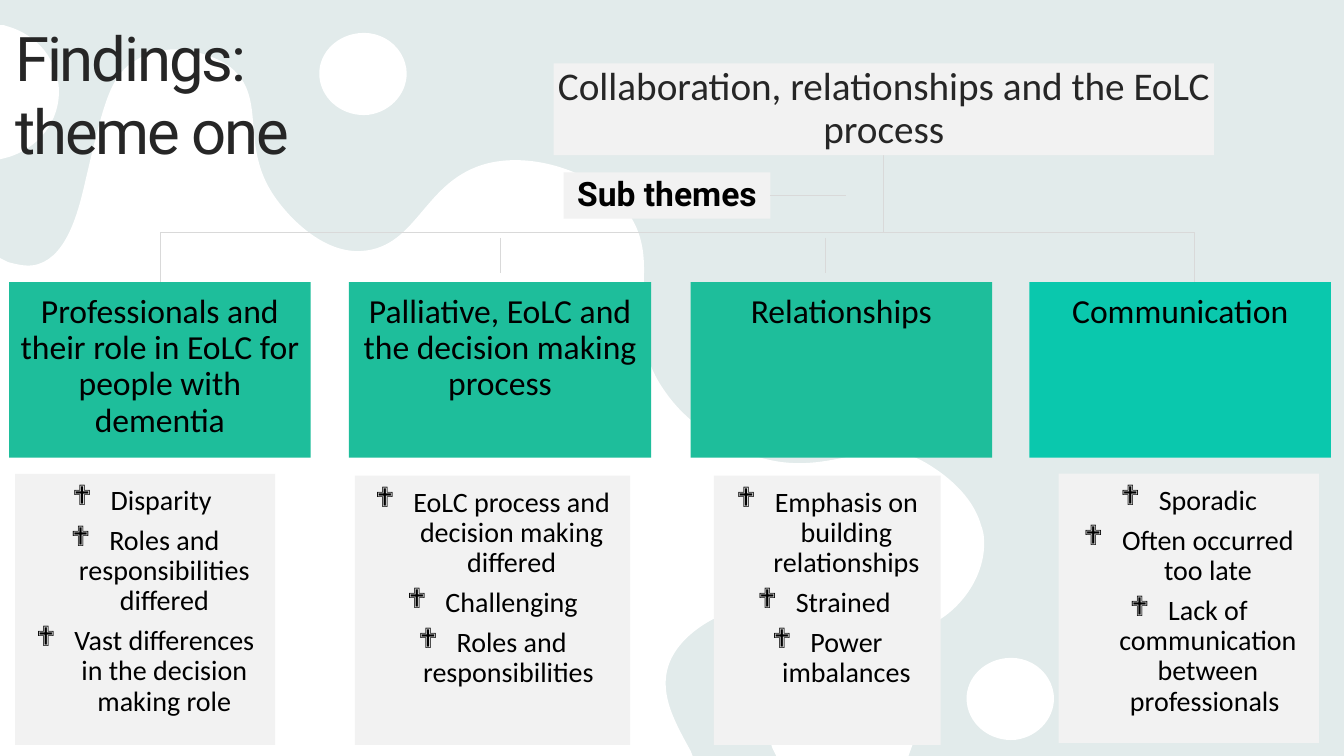
from dataclasses import dataclass

from lxml import etree
from pptx import Presentation
from pptx import util as u
from pptx.dml.color import RGBColor
from pptx.enum import shapes, text
from pptx.oxml.ns import qn

Inches = u.Inches


@dataclass(frozen=True)
class Theme:
    back: str = "E9F3F3"
    veil: str = "AEAEAE"
    white: str = "FFFFFF"
    panel: str = "F2F2F2"
    green: str = "1EBE9B"
    teal: str = "0AC8AD"
    rule: str = "D9D9D9"
    ink: str = "262626"
    black: str = "000000"
    body: str = "Calibri"
    head: str = "Roboto"
    mark: str = "Wingdings"
    title: int = 44
    theme: int = 28
    sub: int = 24
    item: int = 20


T = Theme()

# Background outlines: a start point, then straight (x, y) or curved (6 numbers) steps
WAVE = [
    (1.7, 0.49), (1.91, 0.49, 2.13, 0.55, 2.29, 0.67),
    (2.67, 0.98, 2.35, 1.47, 2.76, 2), (2.81, 2.07, 3.16, 2.52, 3.59, 2.49),
    (4.15, 2.45, 4.2, 1.78, 4.84, 1.62), (5.29, 1.51, 5.88, 1.7, 6.18, 2.05),
    (6.65, 2.6, 6.1, 3.2, 6.6, 3.89), (6.94, 4.38, 7.53, 4.54, 7.58, 4.55),
    (8.27, 4.73, 8.66, 4.29, 9.18, 4.59), (9.28, 4.65, 9.63, 4.86, 9.73, 5.21),
    (9.75, 5.26, 9.76, 5.31, 9.76, 5.36), (9.78, 5.74, 9.48, 6.13, 9.12, 6.24),
    (8.63, 6.38, 8.39, 5.91, 7.71, 5.96), (7.36, 5.98, 6.84, 6.17, 6.66, 6.53),
    (6.51, 6.84, 6.68, 7.14, 6.85, 7.45), (6.87, 7.5), (0, 7.5), (0, 2.56),
    (0.08, 2.6), (0.19, 2.63, 0.29, 2.65, 0.38, 2.62),
    (0.67, 2.53, 0.78, 2.09, 0.85, 1.78), (1.04, 0.97, 1.1, 0.74, 1.36, 0.59),
    (1.45, 0.53, 1.57, 0.5, 1.7, 0.49),
]
CORNER = [
    (0, 0.25), (0.04, 0.25), (0.07, 0.26), (0.22, 0.3, 0.35, 0.39, 0.44, 0.5),
    (0.49, 0.56, 0.52, 0.63, 0.55, 0.7), (0.67, 1.06, 0.47, 1.44, 0.08, 1.56), (0, 1.58),
]
FOOT = [
    (8.35, 6.52), (8.58, 6.52, 8.8, 6.62, 8.94, 6.8),
    (8.98, 6.86, 9.02, 6.92, 9.04, 6.99), (9.09, 7.12, 9.09, 7.26, 9.05, 7.39),
    (9.01, 7.5), (7.7, 7.5), (7.66, 7.42), (7.53, 7.06, 7.74, 6.67, 8.12, 6.56),
    (8.2, 6.53, 8.27, 6.52, 8.35, 6.52),
]
SPOT = [
    (3.55, 0.33), (3.7, 0.31, 3.85, 0.37, 3.94, 0.48),
    (3.99, 0.54, 4.02, 0.61, 4.03, 0.68), (4.06, 0.9, 3.89, 1.11, 3.65, 1.14),
    (3.41, 1.16, 3.2, 1, 3.17, 0.78), (3.14, 0.56, 3.31, 0.36, 3.55, 0.33),
]
DROP = [(x + 6.42, y + 6.2) for x, y in SPOT[:1]] + [
    tuple(n + (6.2 if i % 2 else 6.42) for i, n in enumerate(step)) for step in SPOT[1:]]

# Each sub theme: header (left, width, colour, words), panel (left, top, width, height), items
COLUMNS = [
    ((0.09, 2.99, T.green, "Professionals and their role in EoLC for people with dementia"),
     (0.15, 4.7, 2.58, 2.69),
     ["Disparity ", "Roles and responsibilities differed",
      "Vast differences in the decision making role"]),
    ((3.46, 3, T.green, "Palliative, EoLC and the decision making process"),
     (3.52, 4.72, 2.73, 2.67),
     ["EoLC process and decision making differed", "Challenging",
      "Roles and responsibilities "]),
    ((6.85, 2.99, T.green, "Relationships"),
     (7.08, 4.72, 2.25, 2.67),
     ["Emphasis on building relationships", "Strained ", "Power imbalances"]),
    ((10.21, 2.99, T.teal, "Communication"),
     (10.5, 4.7, 2.58, 2.67),
     ["Sporadic", "Often occurred too late",
      "Lack of communication between professionals "]),
]


def paint(shape, color):
    shape.shadow.inherit = False
    shape.fill.solid()
    shape.fill.fore_color.rgb = RGBColor.from_string(color)
    shape.line.fill.background()


def style(para, size, face, color, bold=False):
    para.font.size = u.Pt(size)
    para.font.name = face
    para.font.color.rgb = RGBColor.from_string(color)
    para.font.bold = bold


def inset(frame, *sides):
    (frame.margin_left, frame.margin_top,
     frame.margin_right, frame.margin_bottom) = map(Inches, sides)
    frame.word_wrap = True


def veil(slide, width, height):
    sheet = slide.shapes.add_shape(shapes.MSO_SHAPE.RECTANGLE, 0, 0, width, height)
    paint(sheet, T.veil)
    tint = sheet._element.spPr.find(qn("a:solidFill"))[0]
    etree.SubElement(tint, qn("a:alpha"), val="10000")


def blobs(slide, outlines):
    # Lay out the end points in hundredths of an inch, then bend the curved steps
    unit = 100
    first = outlines[0][0]
    build = slide.shapes.build_freeform(first[0] * unit, first[1] * unit,
                                        scale=Inches(1) / unit)
    for i, steps in enumerate(outlines):
        if i:
            build.move_to(*(n * unit for n in steps[0]))
        build.add_line_segments(
            [(s[-2] * unit, s[-1] * unit) for s in steps[1:]], close=True)
    shape = build.convert_to_shape()
    paint(shape, T.white)
    top = min(s[-1] for steps in outlines for s in steps)
    sides = list(shape._element.iter(qn("a:lnTo")))
    for side, step in zip(sides, (s for steps in outlines for s in steps[1:])):
        if len(step) == 6:
            side.tag = qn("a:cubicBezTo")
            for i in (0, 2):
                side.insert(i // 2, etree.Element(
                    qn("a:pt"), x=str(round(step[i] * unit)),
                    y=str(round((step[i + 1] - top) * unit))))


def wire(slide, x1, y1, x2, y2, kind=shapes.MSO_CONNECTOR.STRAIGHT):
    line = slide.shapes.add_connector(kind, *map(Inches, (x1, y1, x2, y2)))
    line.line.color.rgb = RGBColor.from_string(T.rule)
    line.line.width = u.Pt(0.25)
    etree.SubElement(line._element.spPr, qn("a:effectLst"))
    return line


def branch(slide, x1, y1, x2, y2):
    # An elbow leaves sideways, so it is laid out on its side and turned to run down
    midx, midy = (x1 + x2) / 2, (y1 + y2) / 2
    half, tall = (y2 - y1) / 2, abs(x2 - x1) / 2
    left = x2 < x1
    if not left:
        half = -half
    line = wire(slide, midx - half, midy - tall, midx + half, midy + tall,
                shapes.MSO_CONNECTOR.ELBOW)
    turn = 90 if left else 270
    line._element.spPr.find(qn("a:xfrm")).set("rot", str(turn * 60000))


def box(slide, place, fill, lines, size, face=T.body, color=T.black,
        bold=False, middle=False, bullet=False):
    rect = slide.shapes.add_shape(shapes.MSO_SHAPE.RECTANGLE, *map(Inches, place))
    paint(rect, fill)
    frame = rect.text_frame
    inset(frame, *([0.01] * 4 if middle else (0.08, 0.12, 0.08, 0)))
    frame.vertical_anchor = text.MSO_ANCHOR.MIDDLE if middle else text.MSO_ANCHOR.TOP
    for i, words in enumerate(lines):
        para = frame.add_paragraph() if i else frame.paragraphs[0]
        para.text = words
        para.alignment = text.PP_ALIGN.CENTER
        para.line_spacing = 0.9
        para.space_after = u.Pt(size * 0.35)
        style(para, size, face, color, bold)
        if bullet:
            props = para._p.get_or_add_pPr()
            props.set("marL", str(Inches(0.38)))
            props.set("indent", str(Inches(-0.38)))
            last = props.find(qn("a:defRPr"))
            last.addprevious(etree.Element(qn("a:buFont"), typeface=T.mark))
            last.addprevious(etree.Element(qn("a:buChar"), char="❖"))
    return rect


def heading(slide, words):
    title = slide.shapes.title
    slide.shapes._spTree.append(title._element)
    title.left, title.top, title.width, title.height = map(Inches, (0.15, 0.15, 3.55, 1.51))
    frame = title.text_frame
    frame.text = words
    frame.auto_size = text.MSO_AUTO_SIZE.NONE
    frame.vertical_anchor = text.MSO_ANCHOR.BOTTOM
    inset(frame, 0, 0, 0, 0)
    para = frame.paragraphs[0]
    para.alignment = text.PP_ALIGN.LEFT
    style(para, T.title, T.head, T.ink)
    para.runs[0]._r.get_or_add_rPr().set("spc", "-150")


def main():
    deck = Presentation()
    deck.slide_width, deck.slide_height = Inches(13.33), Inches(7.5)
    slide = deck.slides.add_slide(deck.slide_layouts[5])

    # Background
    slide.background.fill.solid()
    slide.background.fill.fore_color.rgb = RGBColor.from_string(T.back)
    veil(slide, deck.slide_width, deck.slide_height)
    blobs(slide, [DROP, FOOT, WAVE, SPOT, CORNER])

    # Tree lines
    branch(slide, 8.76, 1.67, 1.59, 2.93)
    branch(slide, 8.76, 1.54, 11.84, 3.06)
    for x in (8.18, 4.96):
        wire(slide, x, 2.36, x, 2.71)

    # Title, theme and label
    heading(slide, "Findings: theme one")
    box(slide, (5.49, 0.63, 6.55, 0.91), T.panel,
        ["Collaboration, relationships and the EoLC process"],
        T.theme, color=T.ink, middle=True)
    label = box(slide, (5.59, 1.71, 2.05, 0.46), T.panel, ["Sub themes"],
                T.sub, T.head, bold=True, middle=True)
    wire(slide, 8.39, 1.94, 7.64, 1.94).end_connect(label, 3)

    # Sub themes with their findings
    for (left, width, fill, name), panel, items in COLUMNS:
        box(slide, (left, 2.8, width, 1.74), fill, [name], T.sub)
        box(slide, panel, T.panel, items, T.item, bullet=True)

    deck.save("out.pptx")


if __name__ == "__main__":
    main()
